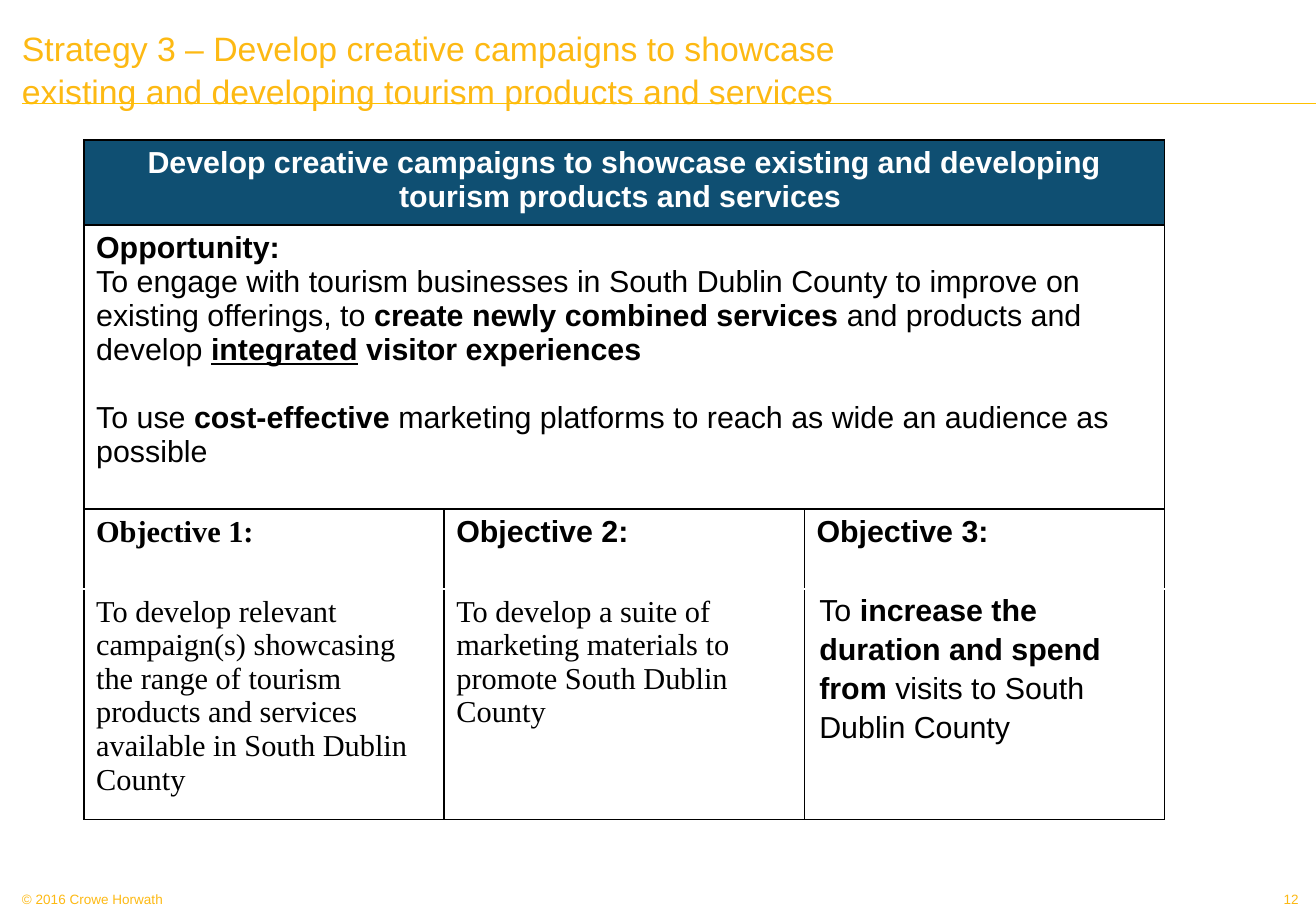
from lxml import etree
from pptx import Presentation
from pptx import util as u
from pptx.dml.color import RGBColor
from pptx.enum import shapes, text
from pptx.oxml import ns

Pt = u.Pt
GOLD, RULE, NAVY, BLACK, WHITE = "FDB913", "FFC000", "0F4F72", "000000", "FFFFFF"
SANS, SERIF = "Arial", "Times New Roman"

TITLE = ("Strategy 3 – Develop creative campaigns to showcase existing "
         "and developing tourism products and services")
FOOTERS = [
    ("© 2016 Crowe Horwath", 13, 186.5, text.PP_ALIGN.LEFT),
    ("12", 737.3, 32.4, text.PP_ALIGN.RIGHT),
]
HEADING = [[("Develop creative campaigns to showcase existing and developing "
             "tourism products and services ", "b")]]
OPPORTUNITY = [
    [("Opportunity:", "b")],
    [("To engage with tourism businesses in South Dublin County to improve on "
      "existing offerings, to ", ""),
     ("create newly combined services ", "b"),
     ("and products and develop ", ""),
     ("integrated", "bu"),
     (" visitor experiences", "b")],
    [("To use ", ""),
     ("cost-effective", "b"),
     (" marketing platforms to reach as wide an audience as possible", "")],
]
OBJECTIVES = [
    ("Objective 1:", SERIF, SERIF,
     [("To develop relevant campaign(s) showcasing the range of tourism products "
       "and services available in South Dublin County", "")]),
    ("Objective 2:", SANS, SERIF,
     [("To develop a suite of marketing materials to promote South Dublin County", "")]),
    ("Objective 3:", SANS, SANS,
     [("To ", ""),
      ("increase the duration and spend from ", "b"),
      ("visits to South Dublin County", "")]),
]
TABLE_LEFT, TABLE_TOP, COLUMN_WIDTH = 49.8, 82.9, 213.5
ROW_HEIGHTS = [47.4, 168.3, 47.4, 126.8]
ROW_EDGES = [(BLACK, BLACK), (BLACK, BLACK), (BLACK, WHITE), (WHITE, BLACK)]


def rgb(color):
    return RGBColor.from_string(color)


def add_run(paragraph, words, size, color, font=SANS, style=""):
    run = paragraph.add_run()
    run.text = words
    run.font.name, run.font.size = font, Pt(size)
    run.font.bold = "b" in style
    run.font.underline = "u" in style
    run.font.color.rgb = rgb(color)


def write_cell(cell, paragraphs, font=SANS, color=BLACK):
    for index, runs in enumerate(paragraphs):
        frame = cell.text_frame
        paragraph = frame.add_paragraph() if index else frame.paragraphs[0]
        for words, style in runs:
            add_run(paragraph, words, 18, color, font, style)


def set_borders(cell, top, bottom):
    properties = cell._tc.get_or_add_tcPr()
    for side, color in (("L", BLACK), ("R", BLACK), ("T", top), ("B", bottom)):
        edge = etree.SubElement(properties, ns.qn("a:ln" + side), w=str(Pt(1)))
        fill = etree.SubElement(edge, ns.qn("a:solidFill"))
        etree.SubElement(fill, ns.qn("a:srgbClr"), val=color)


prs = Presentation()
prs.slide_width, prs.slide_height = Pt(780), Pt(540)
slide = prs.slides.add_slide(prs.slide_layouts[5])

rule = slide.shapes.add_connector(
    shapes.MSO_CONNECTOR.STRAIGHT, Pt(13), Pt(61.2), Pt(780), Pt(61.2))
rule.line.color.rgb = rgb(RULE)
rule.line.width = Pt(0.75)
etree.SubElement(rule._element.spPr, ns.qn("a:effectLst"))

for words, left, width, align in FOOTERS:
    footer = slide.shapes.add_textbox(Pt(left), Pt(527), Pt(width), Pt(12.2)).text_frame
    footer.word_wrap = True
    footer.margin_left = footer.margin_right = 0
    footer.margin_top = footer.margin_bottom = Pt(1.4)
    footer.paragraphs[0].alignment = align
    add_run(footer.paragraphs[0], words, 8, GOLD)

title = slide.shapes.title
title.left, title.top, title.width, title.height = Pt(13), Pt(13.7), Pt(518.4), Pt(54)
heading = title.text_frame
heading.auto_size = text.MSO_AUTO_SIZE.NONE
heading.word_wrap = True
heading.vertical_anchor = text.MSO_ANCHOR.MIDDLE
heading.margin_left = heading.margin_right = heading.margin_top = heading.margin_bottom = 0
heading.paragraphs[0].alignment = text.PP_ALIGN.LEFT
heading.paragraphs[0].line_spacing = 1.05
add_run(heading.paragraphs[0], TITLE, 20, GOLD)

strategy = slide.shapes.add_table(
    len(ROW_HEIGHTS), len(OBJECTIVES), Pt(TABLE_LEFT), Pt(TABLE_TOP),
    Pt(COLUMN_WIDTH * len(OBJECTIVES)), Pt(sum(ROW_HEIGHTS))).table
for column in strategy.columns:
    column.width = Pt(COLUMN_WIDTH)
for index, (height, edges) in enumerate(zip(ROW_HEIGHTS, ROW_EDGES)):
    strategy.rows[index].height = Pt(height)
    for cell in strategy.rows[index].cells:
        set_borders(cell, *edges)
        cell.fill.solid()
        cell.fill.fore_color.rgb = rgb(WHITE if index else NAVY)
for index in (0, 1):
    strategy.cell(index, 0).merge(strategy.cell(index, len(OBJECTIVES) - 1))

banner, opportunity = strategy.cell(0, 0), strategy.cell(1, 0)
write_cell(banner, HEADING, color=WHITE)
banner.text_frame.paragraphs[0].alignment = text.PP_ALIGN.CENTER
write_cell(opportunity, OPPORTUNITY)
opportunity.text_frame.paragraphs[2].space_before = Pt(20.2)

for index, (label, label_font, goal_font, goal) in enumerate(OBJECTIVES):
    write_cell(strategy.cell(2, index), [[(label, "b")]], label_font)
    write_cell(strategy.cell(3, index), [goal], goal_font)

spend = strategy.cell(3, 2)
spend.margin_left = spend.margin_right = Pt(8.9)
spend.margin_top = spend.margin_bottom = 0
spend.text_frame.paragraphs[0].line_spacing = 1.15

prs.save("out.pptx")
